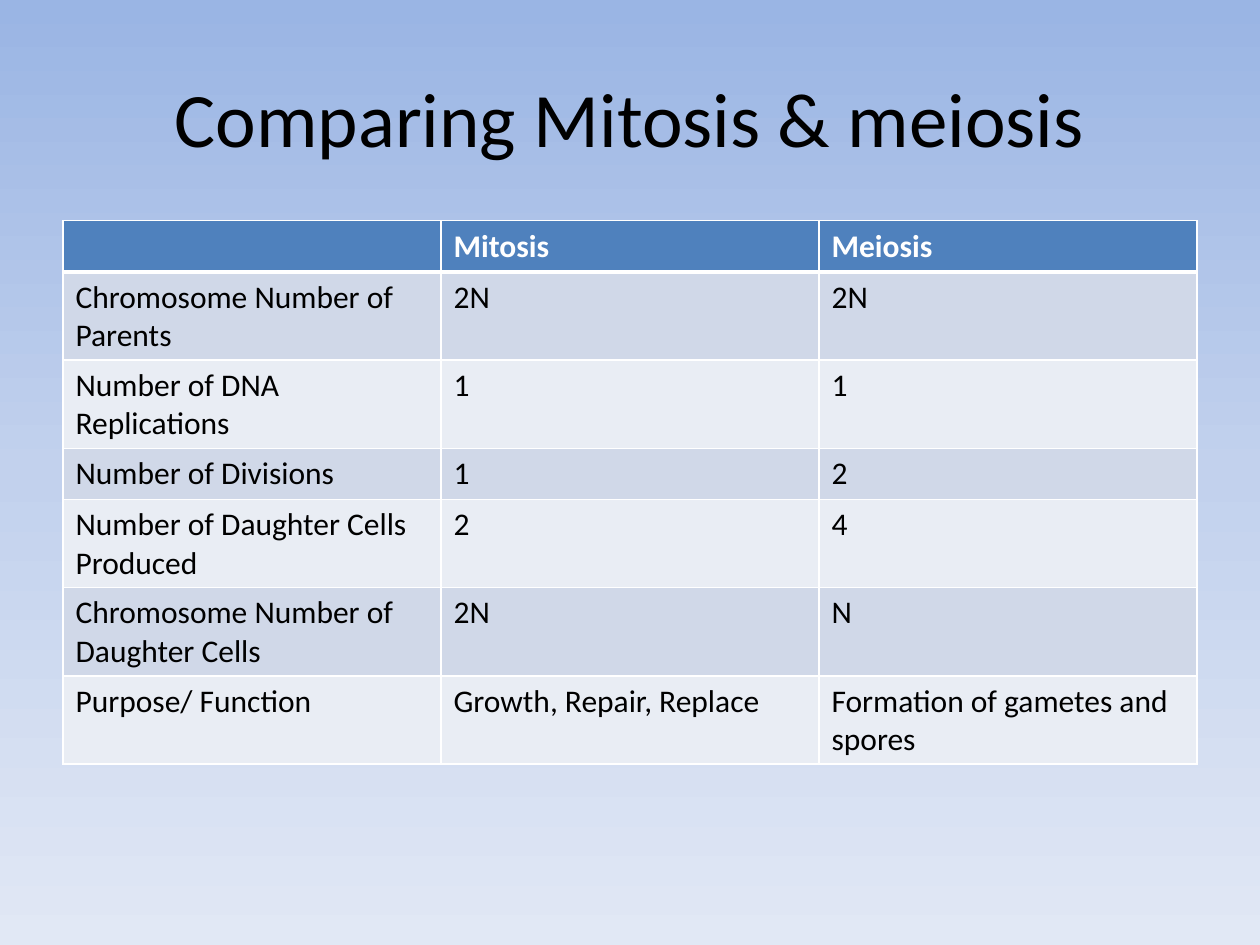
from copy import deepcopy

from lxml.etree import SubElement
from pptx import Presentation
from pptx.dml.color import RGBColor
from pptx.enum.text import MSO_ANCHOR, PP_ALIGN
from pptx.oxml.ns import qn
from pptx.util import Cm, Pt

COLORS = {
    "sky_top": "9AB5E4",
    "sky_middle": "C2D1ED",
    "sky_bottom": "E1E8F5",
    "header": "4F81BD",
    "odd_row": "D0D8E8",
    "even_row": "E9EDF4",
    "white": "FFFFFF",
    "black": "000000",
}
FONT = "Calibri"
ROW_HEIGHT = 1.03
COMPARISON = [
    ("", "Mitosis", "Meiosis"),
    ("Chromosome Number of Parents", "2N", "2N"),
    ("Number of DNA Replications", "1", "1"),
    ("Number of Divisions", "1", "2"),
    ("Number of Daughter Cells Produced", "2", "4"),
    ("Chromosome Number of Daughter Cells", "2N", "N"),
    ("Purpose/ Function", "Growth, Repair, Replace", "Formation of gametes and spores"),
]


def rgb(name):
    return RGBColor.from_string(COLORS[name])


def add_text(paragraph, text, size, color, bold=False):
    run = paragraph.add_run()
    run.text = text
    run.font.name = FONT
    run.font.size = Pt(size)
    run.font.bold = bold
    run.font.color.rgb = rgb(color)


def paint_background(slide):
    fill = slide.background.fill
    fill.gradient()
    fill.gradient_angle = 270
    stop_list = next(slide.element.iter(qn("a:gsLst")))
    stop_list.insert(1, deepcopy(stop_list[0]))
    shades = ("sky_top", "sky_middle", "sky_bottom")
    for stop, shade, position in zip(fill.gradient_stops, shades, (0, 0.5, 1)):
        stop.color.rgb = rgb(shade)
        stop.position = position


def add_title(slide, left, top, width, height):
    title = slide.shapes.add_textbox(Cm(left), Cm(top), Cm(width), Cm(height))
    frame = title.text_frame
    frame.word_wrap = True
    frame.vertical_anchor = MSO_ANCHOR.MIDDLE
    heading = frame.paragraphs[0]
    heading.alignment = PP_ALIGN.CENTER
    add_text(heading, "Comparing Mitosis & meiosis", 44, "black")


def set_borders(cell, **widths):
    properties = cell._tc.get_or_add_tcPr()
    for side in "LRTB":
        line = SubElement(properties, qn(f"a:ln{side}"), w=str(Pt(widths.get(side, 1))))
        solid = SubElement(line, qn("a:solidFill"))
        SubElement(solid, qn("a:srgbClr"), val=COLORS["white"])


def add_comparison(slide, left, top, width):
    row_count, column_count = len(COMPARISON), len(COMPARISON[0])
    table = slide.shapes.add_table(
        row_count, column_count, Cm(left), Cm(top), Cm(width), Cm(ROW_HEIGHT * row_count)
    ).table
    for row_index, texts in enumerate(COMPARISON):
        is_header = row_index == 0
        if is_header:
            shade, borders = "header", {"B": 3}
        else:
            shade = "odd_row" if row_index % 2 else "even_row"
            borders = {"T": 3} if row_index == 1 else {}
        for column_index, text in enumerate(texts):
            cell = table.cell(row_index, column_index)
            set_borders(cell, **borders)
            cell.fill.solid()
            cell.fill.fore_color.rgb = rgb(shade)
            if text:
                ink = "white" if is_header else "black"
                add_text(cell.text_frame.paragraphs[0], text, 18, ink, is_header)


def main():
    presentation = Presentation()
    presentation.slide_width = Cm(25.4)
    presentation.slide_height = Cm(19.05)
    slide = presentation.slides.add_slide(presentation.slide_layouts[6])
    paint_background(slide)
    add_title(slide, 1.27, 0.76, 22.86, 3.18)
    add_comparison(slide, 1.27, 4.45, 22.86)
    presentation.save("out.pptx")


if __name__ == "__main__":
    main()
